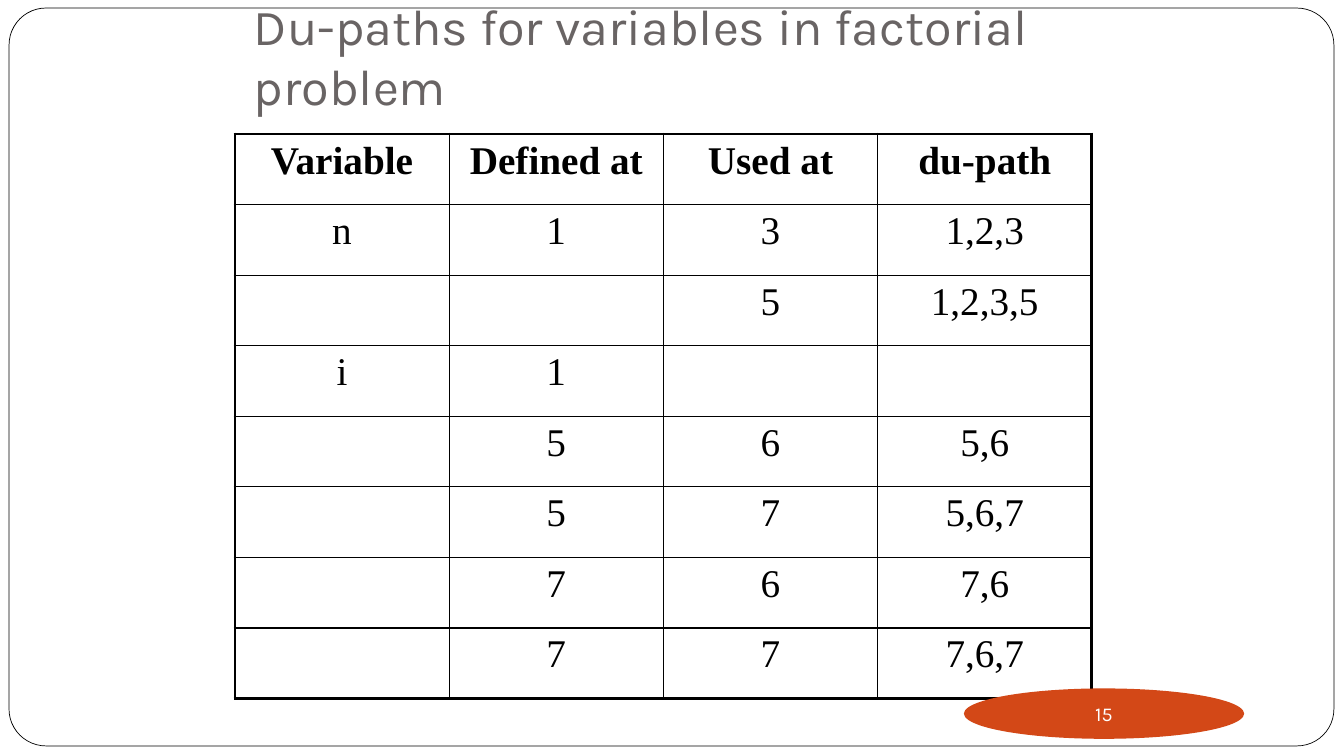
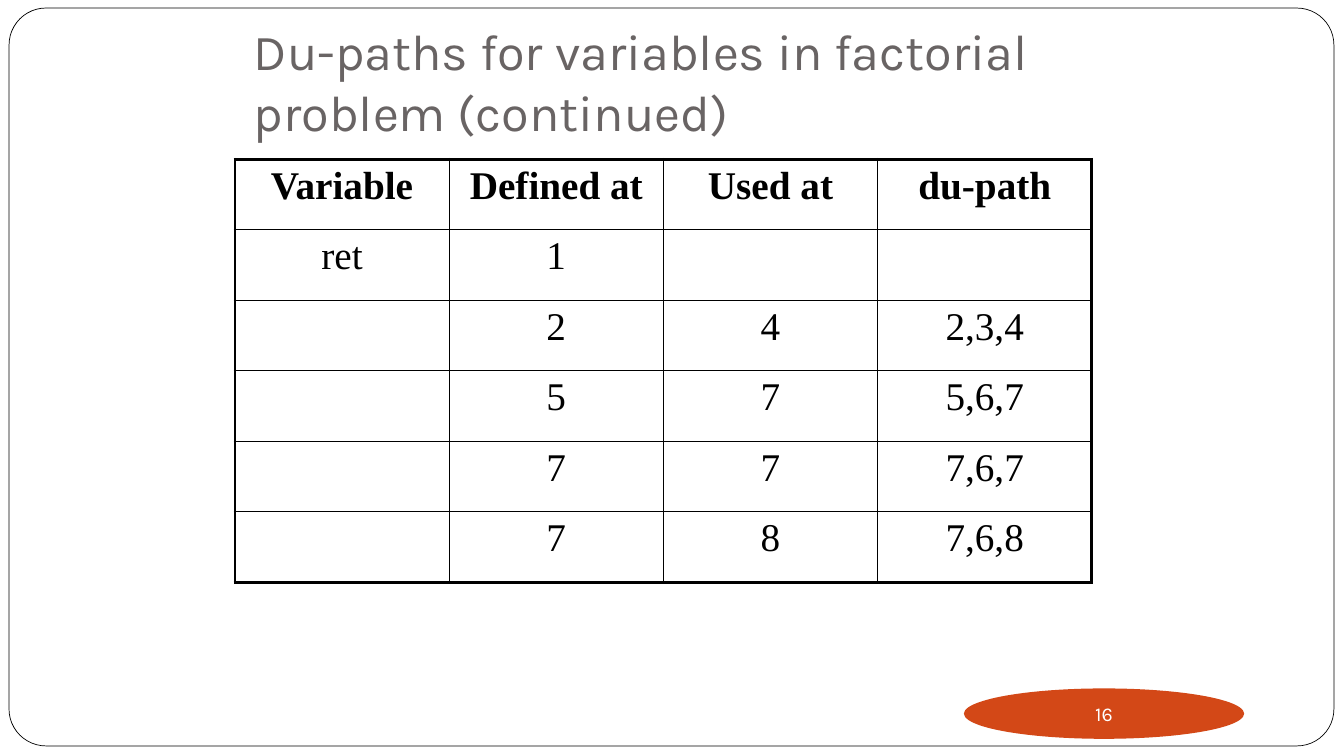
"""Builds two slides that tabulate the du-paths of a factorial program."""
from lxml import etree
from pptx import Presentation
from pptx.dml.color import RGBColor
from pptx.enum.shapes import MSO_SHAPE
from pptx.enum.text import MSO_ANCHOR, PP_ALIGN
from pptx.oxml.ns import qn
from pptx.util import Inches, Pt

ROUND_RECT, OVAL = MSO_SHAPE.ROUNDED_RECTANGLE, MSO_SHAPE.OVAL
LEFT, CENTER = PP_ALIGN.LEFT, PP_ALIGN.CENTER
MIDDLE, BOTTOM = MSO_ANCHOR.MIDDLE, MSO_ANCHOR.BOTTOM

BLACK, WHITE, GREY, ORANGE = "000000", "FFFFFF", "696464", "D34817"
SANS, SERIF = "Karla", "Times New Roman"
THIN, THICK = 1, 2.25
TABLE_W, ROW_H = 8.5, 0.7

HEADER = ("Variable", "Defined at", "Used at", "du-path")
TITLE = "Du-paths for variables in factorial problem"
SLIDES = [
    (TITLE, 0, 15, [
        ("n", "1", "3", "1,2,3"),
        ("", "", "5", "1,2,3,5"),
        ("i", "1", "", ""),
        ("", "5", "6", "5,6"),
        ("", "5", "7", "5,6,7"),
        ("", "7", "6", "7,6"),
        ("", "7", "7", "7,6,7"),
    ]),
    (TITLE + " (continued)", 0.25, 16, [
        ("ret", "1", "", ""),
        ("", "2", "4", "2,3,4"),
        ("", "5", "7", "5,6,7"),
        ("", "7", "7", "7,6,7"),
        ("", "7", "8", "7,6,8"),
    ]),
]


def rgb(color):
    return RGBColor.from_string(color)


def write(tf, text, font, size, color, align=LEFT, bold=False):
    tf.text = text
    p = tf.paragraphs[0]
    p.alignment = align
    for r in p.runs:
        r.font.name = font
        r.font.size = Pt(size)
        r.font.bold = bold
        r.font.color.rgb = rgb(color)


def add_shape(slide, kind, left, top, width, height, fill):
    sp = slide.shapes.add_shape(
        kind, Inches(left), Inches(top), Inches(width), Inches(height))
    sp.shadow.inherit = False
    sp.fill.solid()
    sp.fill.fore_color.rgb = rgb(fill)
    sp.line.fill.background()
    return sp


def add_frame(slide):
    sp = add_shape(slide, ROUND_RECT, 0.09, 0.08, 13.14, 7.32, WHITE)
    sp.adjustments[0] = 0.05
    sp.line.color.rgb = rgb(BLACK)
    sp.line.width = Pt(0.5)


def add_title(slide, text, top):
    sp = slide.shapes.add_textbox(
        Inches(2.42), Inches(top), Inches(8.5), Inches(1.25))
    tf = sp.text_frame
    tf.word_wrap = True
    tf.vertical_anchor = BOTTOM
    tf.margin_bottom = Inches(0.1)
    write(tf, text, SANS, 36, GREY)


def add_page_number(slide, number):
    sp = add_shape(slide, OVAL, 9.56, 6.83, 2.78, 0.5, ORANGE)
    tf = sp.text_frame
    tf.word_wrap = False
    tf.vertical_anchor = MIDDLE
    tf.margin_left = tf.margin_right = tf.margin_top = tf.margin_bottom = 0
    write(tf, str(number), SANS, 14, WHITE, CENTER)


def set_border(cell, side, width):
    tc_pr = cell._tc.get_or_add_tcPr()
    ln = etree.SubElement(tc_pr, qn("a:ln" + side), w=str(Pt(width)))
    fill = etree.SubElement(ln, qn("a:solidFill"))
    etree.SubElement(fill, qn("a:srgbClr"), val=BLACK)


def add_table(slide, rows, top):
    n_rows, n_cols = len(rows), len(HEADER)
    table = slide.shapes.add_table(
        n_rows, n_cols, Inches(2.33), Inches(top),
        Inches(TABLE_W), Inches(ROW_H * n_rows)).table
    table.first_row = table.horz_banding = False
    for i, row in enumerate(rows):
        for j, text in enumerate(row):
            cell = table.cell(i, j)
            write(cell.text_frame, text, SERIF, 28, BLACK, CENTER, i == 0)
            outer = {"L": j == 0, "R": j == n_cols - 1,
                     "T": i == 0, "B": i == n_rows - 1}
            for side, is_outer in outer.items():
                set_border(cell, side, THICK if is_outer else THIN)
            cell.fill.background()


def main():
    prs = Presentation()
    prs.slide_width, prs.slide_height = Inches(13.33), Inches(7.5)
    for title, top, number, rows in SLIDES:
        slide = prs.slides.add_slide(prs.slide_layouts[6])
        add_frame(slide)
        add_title(slide, title, top)
        add_table(slide, [HEADER] + rows, top + 1.33)
        add_page_number(slide, number)
    prs.save("out.pptx")


if __name__ == "__main__":
    main()
